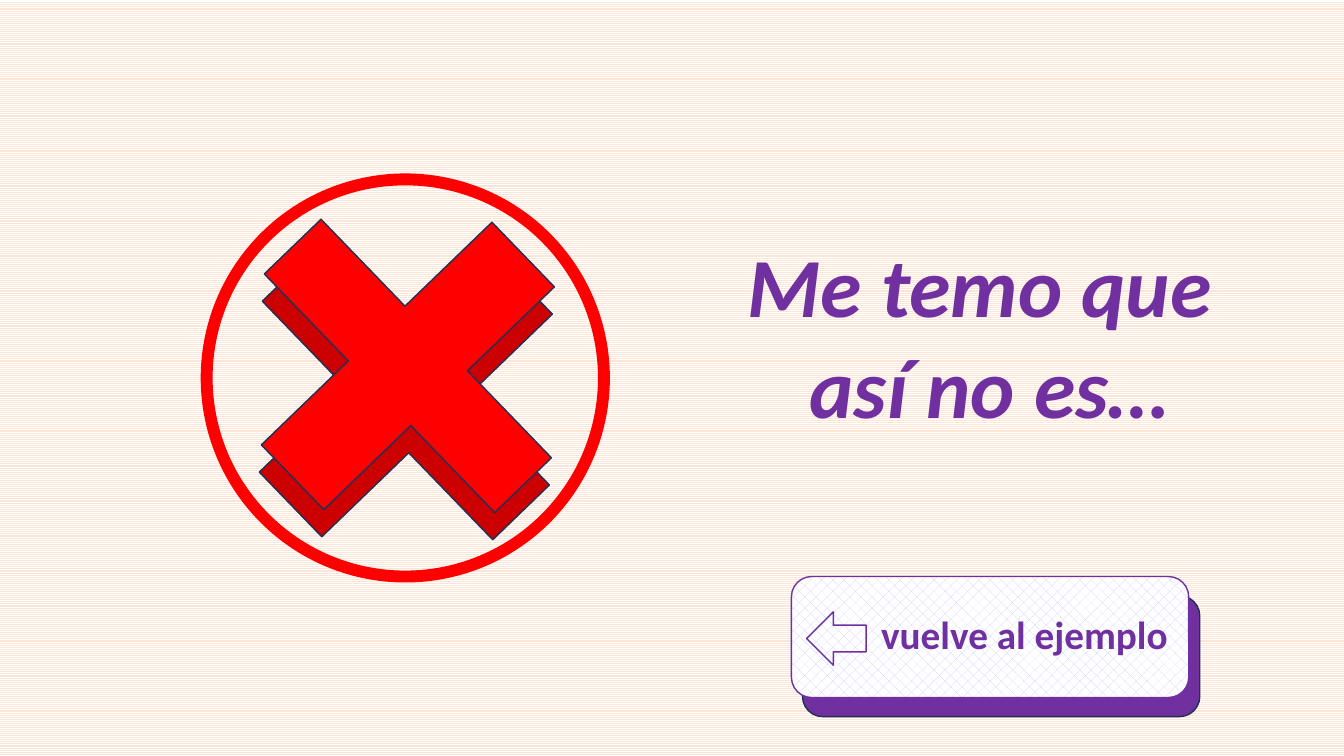
import pptx
import pptx.dml.color
import pptx.enum.dml
import pptx.enum.shapes
import pptx.enum.text
import pptx.oxml
import pptx.oxml.ns
import pptx.util

SHAPE = pptx.enum.shapes.MSO_SHAPE
PATTERN = pptx.enum.dml.MSO_PATTERN
ALIGN = pptx.enum.text.PP_ALIGN
ANCHOR = pptx.enum.text.MSO_ANCHOR
Inches, Pt = pptx.util.Inches, pptx.util.Pt
PURPLE, RED, DARK_RED, NAVY = "7030A0", "FF0000", "CC0000", "1E3256"


def rgb(color):
    """Turn a hex string into a colour."""
    return pptx.dml.color.RGBColor.from_string(color)


def set_pattern(fill, pattern, fore):
    """Fill with a pattern on white."""
    fill.patterned()
    fill.pattern = pattern
    fill.fore_color.rgb = rgb(fore)
    fill.back_color.rgb = rgb("FFFFFF")


def add_shape(slide, kind, box, line, fill=None, weight=1):
    """Add an outlined preset shape, unfilled unless a colour is given."""
    sp = slide.shapes.add_shape(kind, *map(Inches, box))
    sp.shadow.inherit = False
    if fill:
        sp.fill.solid()
        sp.fill.fore_color.rgb = rgb(fill)
    else:
        sp.fill.background()
    sp.line.color.rgb = rgb(line)
    sp.line.width = Pt(weight)
    return sp


def format_text(p, size, italic=None):
    """Centre a paragraph and set its runs in bold purple."""
    p.alignment = ALIGN.CENTER
    for r in p.runs:
        r.font.name = "Calibri"
        r.font.size = Pt(size)
        r.font.bold = True
        r.font.italic = italic
        r.font.color.rgb = rgb(PURPLE)


def add_message(slide, box, lines):
    """Add the large outlined message, one paragraph per line."""
    tf = slide.shapes.add_textbox(*map(Inches, box)).text_frame
    tf.word_wrap = False
    tf.auto_size = pptx.enum.text.MSO_AUTO_SIZE.SHAPE_TO_FIT_TEXT
    tf.text = "\n".join(lines)
    for p in tf.paragraphs:
        format_text(p, 60, italic=True)
        for r in p.runs:
            outline = pptx.oxml.parse_xml(
                f'<a:ln {pptx.oxml.ns.nsdecls("a")} w="{Pt(1)}"><a:solidFill>'
                f'<a:srgbClr val="{PURPLE}"/></a:solidFill></a:ln>')
            r.font._element.insert(0, outline)


def add_wrong_mark(slide, box):
    """Add a ringed cross with a darker cross behind it."""
    x, y, w, h = box
    add_shape(slide, SHAPE.FLOWCHART_CONNECTOR, box, RED, weight=8.5)
    for dx, dy, fill in ((0.33, 0.53, DARK_RED), (0.35, 0.26, RED)):
        sp = add_shape(slide, SHAPE.CROSS, (x + dx, y + dy, 3.29, 3.18), NAVY, fill)
        sp.adjustments[0] = 0.377
        sp.rotation = 46


def add_back_button(slide, box, label):
    """Add a button with a solid edge, a patterned face and a left arrow."""
    x, y, w, h = box
    add_shape(slide, SHAPE.ROUNDED_RECTANGLE, (x + 0.11, y + 0.19, w, h), NAVY, PURPLE)
    face = add_shape(slide, SHAPE.ROUNDED_RECTANGLE, box, PURPLE)
    set_pattern(face.fill, PATTERN.PERCENT_25, "CCCCFF")
    tf = face.text_frame
    tf.word_wrap = True
    tf.margin_left, tf.margin_right = Inches(0.72), Inches(0.04)
    tf.vertical_anchor = ANCHOR.MIDDLE
    tf.text = label
    p = tf.paragraphs[0]
    p.line_spacing = 0.9
    p.space_before = Pt(10)
    format_text(p, 28)
    add_shape(slide, SHAPE.LEFT_ARROW, (x + 0.15, y + 0.35, 0.59, 0.53), PURPLE)


def main():
    """Build and save the slide."""
    prs = pptx.Presentation()
    prs.slide_width, prs.slide_height = Inches(13.33), Inches(7.5)
    slide = prs.slides.add_slide(prs.slide_layouts[6])
    set_pattern(slide.background.fill, PATTERN.LIGHT_HORIZONTAL, "FBE5D6")
    add_message(slide, (7.29, 2.27, 5.04, 2.12), ("Me temo que ", "así no es…"))
    add_wrong_mark(slide, (2.05, 1.78, 3.94, 3.94))
    add_back_button(slide, (7.85, 5.72, 3.94, 1.2), "vuelve al ejemplo")
    prs.save("out.pptx")


if __name__ == "__main__":
    main()
